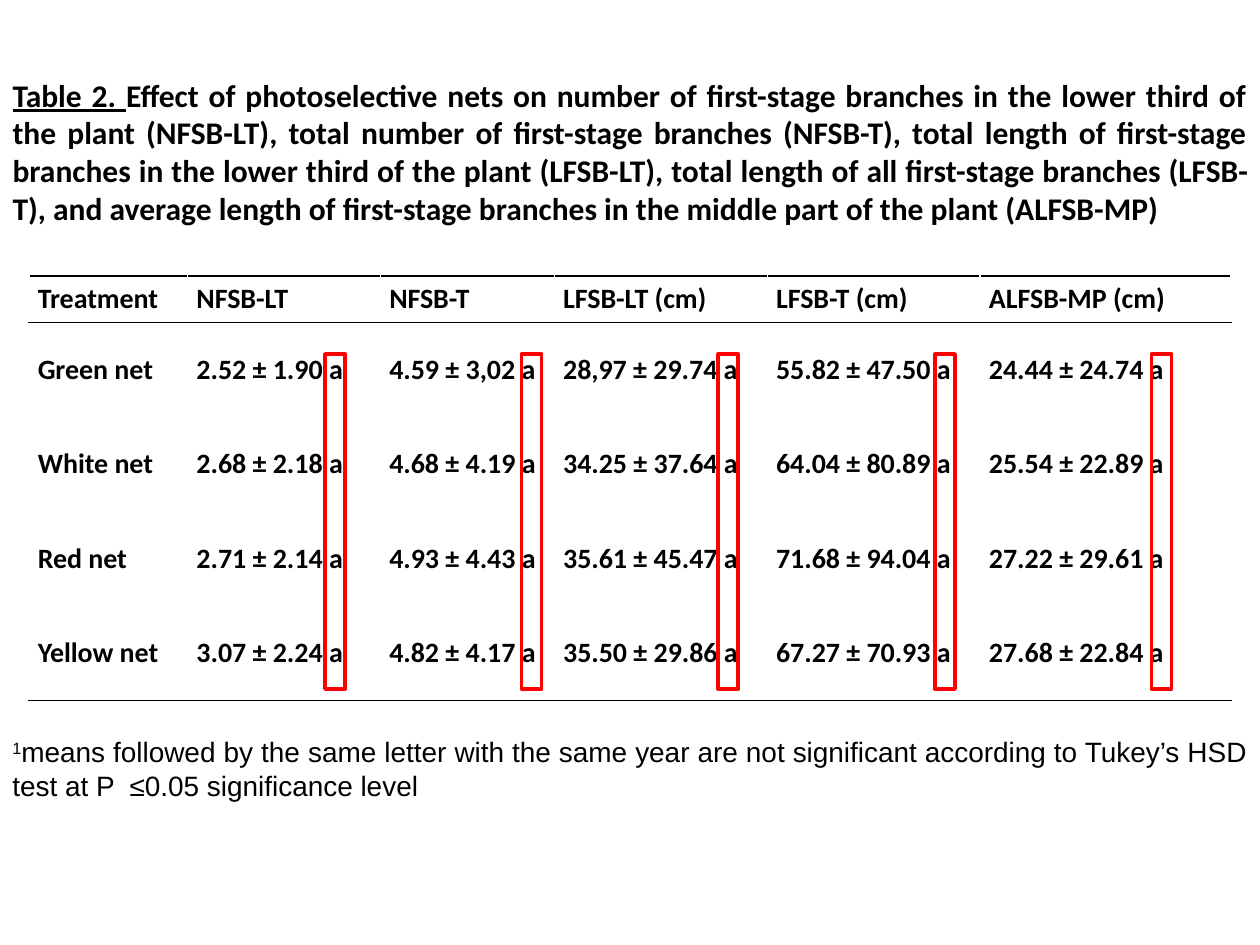
"""Build the slide with Table 2 on photoselective nets and branching."""
from dataclasses import dataclass

from lxml.etree import SubElement
from pptx import Presentation
from pptx.dml.color import RGBColor as RGB
from pptx.enum.shapes import MSO_SHAPE as Shape
from pptx.enum.text import MSO_ANCHOR as Anchor, MSO_AUTO_SIZE as AutoSize, PP_ALIGN as Align
from pptx.oxml.ns import qn
from pptx.util import Inches, Pt


@dataclass(frozen=True)
class Theme:
    ink: RGB = RGB(0, 0, 0)
    highlight: RGB = RGB(0xFF, 0, 0)
    head_font: str = "Calibri"
    note_font: str = "Arial"
    caption_size: int = 18
    table_size: int = 16
    note_size: int = 16
    rule_width: int = 1
    highlight_width: int = 2


THEME = Theme()

CAPTION = [
    ("Table 2. ", {"underline": True}),
    ("Effect of photoselective nets on number of first-stage branches in the lower third of "
     "the plant (NFSB-LT), total number of first-stage branches (NFSB-T), total length of "
     "first-stage branches in the lower third of the plant (LFSB-LT), total length of all "
     "first-stage branches (LFSB-T), and average length of first-stage branches in the middle "
     "part of the plant (ALFSB-MP)", {}),
]
TREATMENTS = [
    ("Treatment", "NFSB-LT", "NFSB-T", "LFSB-LT (cm)", "LFSB-T (cm)", "ALFSB-MP (cm)"),
    ("Green net", "2.52 ± 1.90 a", "4.59 ± 3,02 a", "28,97 ± 29.74 a", "55.82 ± 47.50 a",
     "24.44 ± 24.74 a"),
    ("White net", "2.68 ± 2.18 a", "4.68 ± 4.19 a", "34.25 ± 37.64 a", "64.04 ± 80.89 a",
     "25.54 ± 22.89 a"),
    ("Red net", "2.71 ± 2.14 a", "4.93 ± 4.43 a", "35.61 ± 45.47 a", "71.68 ± 94.04 a",
     "27.22 ± 29.61 a"),
    ("Yellow net", "3.07 ± 2.24 a", "4.82 ± 4.17 a", "35.50 ± 29.86 a", "67.27 ± 70.93 a",
     "27.68 ± 22.84 a"),
]
FOOTNOTE = [
    ("1", {"superscript": True}),
    ("means followed by the same letter with the same year are not significant according to "
     "Tukey’s HSD test at P  ≤0.05 significance level", {}),
]

COLUMN_WIDTHS = (1.26, 1.53, 1.38, 1.69, 1.69, 1.99)
HEADER_HEIGHT, ROW_HEIGHT = 0.37, 0.75
TABLE_LEFT, TABLE_TOP = 0.23, 2.19
LETTER_LEFTS = (2.58, 4.14, 5.7, 7.42, 9.14)
LETTER_TOP, LETTER_WIDTH, LETTER_HEIGHT = 2.81, 0.16, 2.66


def write(paragraph, text, font, size, bold=False, underline=False, superscript=False):
    run = paragraph.add_run()
    run.text = text
    run.font.name, run.font.size = font, Pt(size)
    run.font.bold, run.font.underline = bold, underline
    run.font.color.rgb = THEME.ink
    if superscript:
        run._r.get_or_add_rPr().set("baseline", "30000")


def fill_block(block, box, runs, anchor, **style):
    block.left, block.top, block.width, block.height = map(Inches, box)
    frame = block.text_frame
    frame.word_wrap = True
    frame.auto_size = AutoSize.SHAPE_TO_FIT_TEXT
    frame.vertical_anchor = anchor
    frame.paragraphs[0].alignment = Align.JUSTIFY
    for text, accent in runs:
        write(frame.paragraphs[0], text, **style, **accent)


def rule(cell, sides):
    properties = cell._tc.get_or_add_tcPr()
    for position, side in enumerate(sides):
        line = SubElement(properties, qn(f"a:{side}"), w=str(Pt(THEME.rule_width)))
        solid = SubElement(line, qn("a:solidFill"))
        SubElement(solid, qn("a:srgbClr"), val=str(THEME.ink))
        properties.insert(position, line)


def add_treatment_table(slide):
    heights = [HEADER_HEIGHT] + [ROW_HEIGHT] * (len(TREATMENTS) - 1)
    table = slide.shapes.add_table(
        len(heights), len(COLUMN_WIDTHS), Inches(TABLE_LEFT), Inches(TABLE_TOP),
        Inches(sum(COLUMN_WIDTHS)), Inches(sum(heights))).table
    table.first_row = table.horz_banding = False
    for column, width in zip(table.columns, COLUMN_WIDTHS):
        column.width = Inches(width)
    rules = {0: ("lnT", "lnB"), 1: ("lnT",), len(heights) - 1: ("lnB",)}
    for index, (treatment, height) in enumerate(zip(TREATMENTS, heights)):
        table.rows[index].height = Inches(height)
        for cell, text in zip(table.rows[index].cells, treatment):
            cell.fill.background()
            cell.vertical_anchor = Anchor.MIDDLE
            cell.margin_left = cell.margin_right = Inches(0.07)
            cell.margin_top = cell.margin_bottom = 0
            write(cell.text_frame.paragraphs[0], text, THEME.head_font, THEME.table_size, bold=True)
            rule(cell, rules.get(index, ()))


def add_letter_frames(slide):
    for left in LETTER_LEFTS:
        frame = slide.shapes.add_shape(
            Shape.RECTANGLE, Inches(left), Inches(LETTER_TOP),
            Inches(LETTER_WIDTH), Inches(LETTER_HEIGHT))
        frame.shadow.inherit = False
        frame.fill.background()
        frame.line.color.rgb = THEME.highlight
        frame.line.width = Pt(THEME.highlight_width)


def main():
    deck = Presentation()
    deck.slide_width, deck.slide_height = Inches(10), Inches(7.5)
    slide = deck.slides.add_slide(deck.slide_layouts[5])
    fill_block(slide.shapes.title, (0, 0.55, 10, 1.31), CAPTION, Anchor.TOP,
               font=THEME.head_font, size=THEME.caption_size, bold=True)
    add_treatment_table(slide)
    add_letter_frames(slide)
    footnote = slide.shapes.add_textbox(0, 0, 0, 0)
    fill_block(footnote, (0, 5.78, 10, 0.64), FOOTNOTE, Anchor.MIDDLE,
               font=THEME.note_font, size=THEME.note_size)
    deck.save("out.pptx")


if __name__ == "__main__":
    main()
